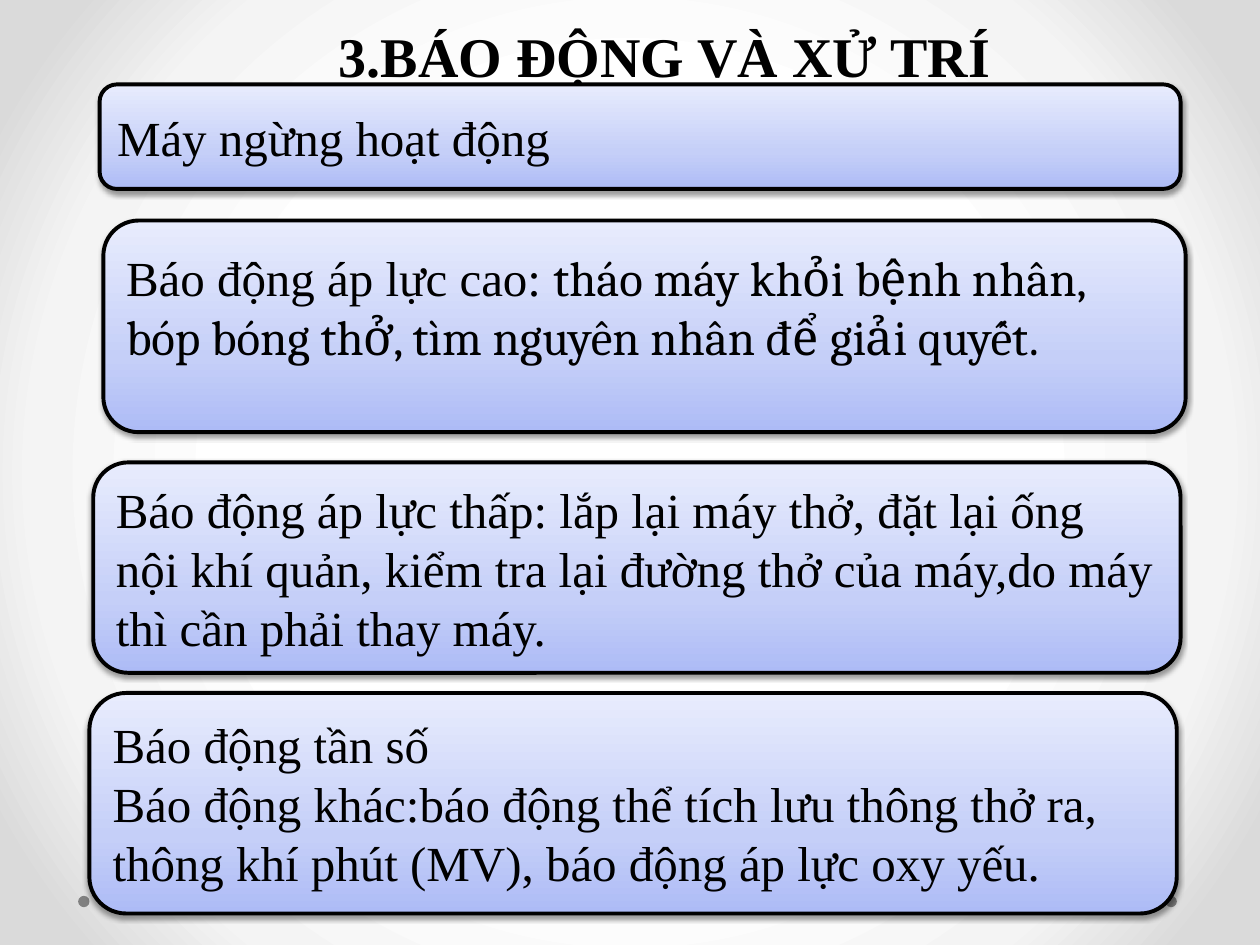
from lxml import etree
from pptx import Presentation
from pptx import util as u
from pptx.dml.color import RGBColor
from pptx.enum import shapes, text
from pptx.oxml import parse_xml
from pptx.oxml.ns import nsdecls, qn

THEME = {
    "ink": "000000",
    "dot": "808080",
    "back": [(50, "FFFFFF"), (76, "F4F4F4"), (92, "DADADA")],
    "box": [(0, "ADBBF6"), (35, "C5CFF8"), (100, "E8ECFD")],
    "serif": "Times New Roman",
    "alt": "Cambria",
    "head": 32,
    "body": 28,
    "edge": 2.25,
}
WIDE, HIGH = 10, 7.5
RADIAL = '<a:path path="circle"><a:fillToRect l="50000" t="50000" r="50000" b="50000"/></a:path>'
UPWARD = '<a:lin ang="16200000" scaled="0"/>'


def blend(fill, root, stops, way):
    """Fill with a gradient of any number of stops, running the given way."""
    fill.gradient()
    old = root.find(".//" + qn("a:gradFill"))
    marks = "".join(
        f'<a:gs pos="{pos * 1000}"><a:srgbClr val="{tint}"/></a:gs>' for pos, tint in stops)
    new = parse_xml(
        f'<a:gradFill {nsdecls("a")} rotWithShape="1"><a:gsLst>{marks}</a:gsLst>{way}</a:gradFill>')
    old.getparent().replace(old, new)


def style(run, size, face, bold=False):
    run.font.size, run.font.name, run.font.bold = u.Pt(size), face, bold
    run.font.color.rgb = RGBColor.from_string(THEME["ink"])


deck = Presentation()
deck.slide_width, deck.slide_height = u.Inches(WIDE), u.Inches(HIGH)
slide = deck.slides.add_slide(deck.slide_layouts[6])
blend(slide.background.fill, slide.element, THEME["back"], RADIAL)

# Footer dots
for left in (9.25, 0.62):
    dot = slide.shapes.add_shape(
        shapes.MSO_SHAPE.OVAL, *map(u.Inches, (left, 7.11, 0.09, 0.09)))
    dot.shadow.inherit = False
    dot.fill.solid()
    dot.fill.fore_color.rgb = RGBColor.from_string(THEME["dot"])
    dot.line.fill.background()

# Heading
head = slide.shapes.add_textbox(*map(u.Inches, (0.79, 0, 8.97, HIGH / 10)))
frame = head.text_frame
frame.word_wrap = True
frame.vertical_anchor = text.MSO_ANCHOR.BOTTOM
frame.text = "3.BÁO ĐỘNG VÀ XỬ TRÍ"
para = frame.paragraphs[0]
para.alignment = text.PP_ALIGN.CENTER
para.line_spacing = u.Pt(58)
style(para.runs[0], THEME["head"], THEME["serif"], True)

# Alarm boxes: place, bottom inset, then paragraphs as lists of runs
serif, alt = THEME["serif"], THEME["alt"]
ALARMS = [
    ((0.79, 0.67, 8.58, 0.83), 0.05, [[("Máy ngừng hoạt động", serif)]]),
    ((0.82, 1.75, 8.59, 1.68), 0.36, [[
        ("Báo động áp lực cao: ", serif),
        ("tháo máy khỏi bệnh nhân, bóp bóng thở, tìm nguyên nhân để giải quyết.", alt)]]),
    ((0.74, 3.67, 8.63, 1.67), 0.05, [[
        ("Báo động áp lực thấp: lắp lại máy thở, đặt lại ống nội khí quản, kiểm tra lại "
         "đường thở của máy,do máy thì cần phải thay máy.", serif)]]),
    ((0.71, 5.5, 8.63, 1.75), 0.05, [
        [("Báo động tần số", serif)],
        [("Báo động khác:báo động thể tích lưu thông thở ra, thông khí phút (MV), "
          "báo động áp lực oxy yếu.", serif)]]),
]
for place, inset, paras in ALARMS:
    box = slide.shapes.add_shape(
        shapes.MSO_SHAPE.ROUNDED_RECTANGLE, *map(u.Inches, place))
    blend(box.fill, box.element, THEME["box"], UPWARD)
    box.line.color.rgb = RGBColor.from_string(THEME["ink"])
    box.line.width = u.Pt(THEME["edge"])
    box.shadow.inherit = False
    glow = etree.SubElement(
        box.element.spPr.find(qn("a:effectLst")), qn("a:outerShdw"),
        blurRad=str(u.Pt(3.1)), dist=str(u.Pt(1.6)), dir="5400000", rotWithShape="0")
    tint = etree.SubElement(glow, qn("a:srgbClr"), val=THEME["ink"])
    etree.SubElement(tint, qn("a:alpha"), val="38000")

    frame = box.text_frame
    frame.word_wrap = True
    frame.vertical_anchor = text.MSO_ANCHOR.MIDDLE
    frame.margin_bottom = u.Inches(inset)
    for i, parts in enumerate(paras):
        para = frame.add_paragraph() if i else frame.paragraphs[0]
        para.alignment = text.PP_ALIGN.LEFT
        for words, face in parts:
            run = para.add_run()
            run.text = words
            style(run, THEME["body"], face)

deck.save("out.pptx")
